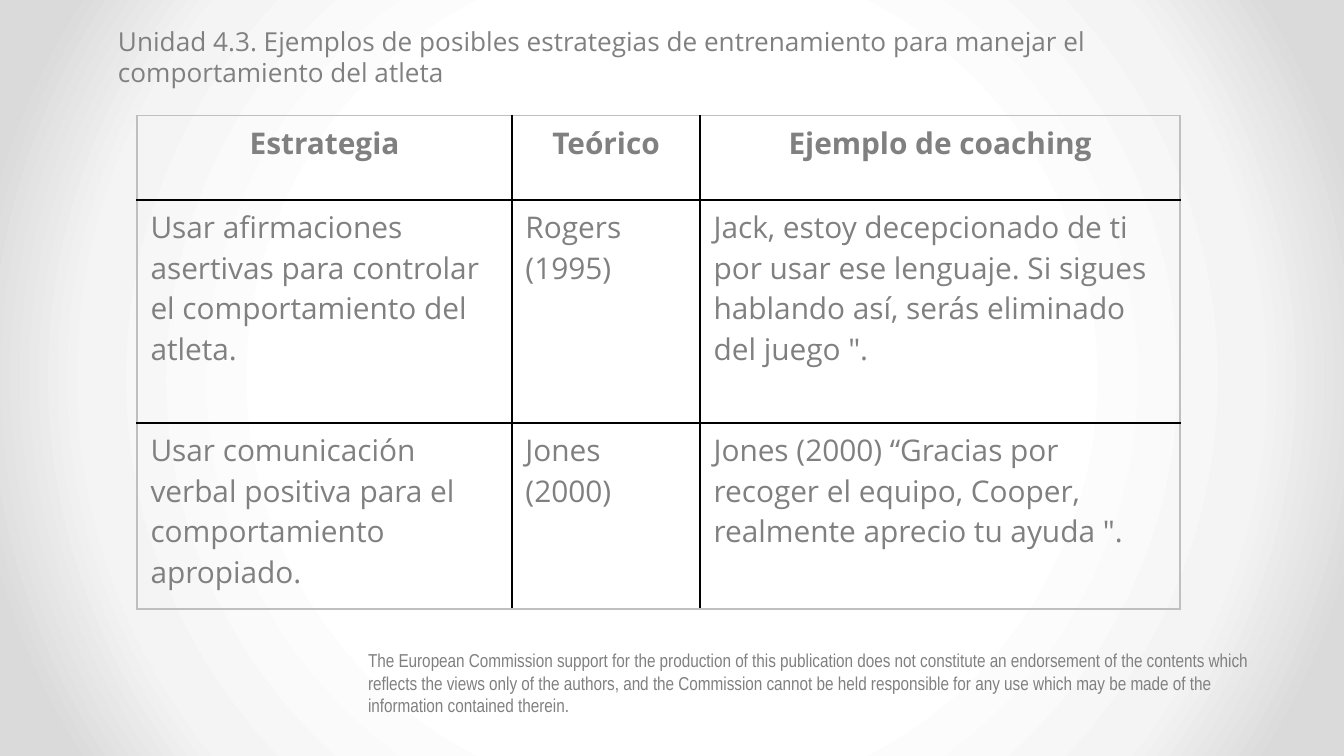
from lxml import etree
from pptx import Presentation
from pptx.dml.color import RGBColor
from pptx.enum import text
from pptx.oxml import ns
from pptx.util import Inches, Pt

GREY = RGBColor(0x80, 0x80, 0x80)
BLACK = RGBColor(0, 0, 0)
FRAME = RGBColor(0xBF, 0xBF, 0xBF)
GRADIENT = [
    (50, RGBColor(0xFF, 0xFF, 0xFF)),
    (76, RGBColor(0xF4, 0xF4, 0xF4)),
    (92, RGBColor(0xDA, 0xDA, 0xDA)),
]


def add_element(parent, tag, **attributes):
    return etree.SubElement(parent, ns.qn(tag), attributes)


def add_text(left, top, width, height, words, font_name, size):
    shape = slide.shapes.add_textbox(Inches(left), Inches(top), Inches(width), Inches(height))
    shape.text_frame.word_wrap = True
    paragraph = shape.text_frame.paragraphs[0]
    paragraph.text = words
    paragraph.font.name = font_name
    paragraph.font.size = Pt(size)
    paragraph.font.color.rgb = GREY


presentation = Presentation()
presentation.slide_width = Inches(10)
presentation.slide_height = Inches(10) * 9 // 16
slide = presentation.slides.add_slide(presentation.slide_layouts[6])

background = slide.background.fill
background.gradient()
gradient = slide.background._cSld.find(".//" + ns.qn("a:gradFill"))
for child in list(gradient):
    gradient.remove(child)
stops = add_element(gradient, "a:gsLst")
for position, color in GRADIENT:
    stop = add_element(stops, "a:gs", pos=str(position * 1000))
    add_element(stop, "a:srgbClr", val=str(color))
circle = add_element(gradient, "a:path", path="circle")
add_element(circle, "a:fillToRect", l="50000", t="50000", r="50000", b="50000")

add_text(
    2.64, 4.78, 6.93, 0.67,
    "The European Commission support for the production of this publication does not "
    "constitute an endorsement of the contents which reflects the views only of the authors, "
    "and the Commission cannot be held responsible for any use which may be made of the "
    "information contained therein.",
    "Arial Narrow", 10,
)

rows = [
    ["Estrategia", "Teórico", "Ejemplo de coaching"],
    [
        "Usar afirmaciones asertivas para controlar el comportamiento del atleta.",
        "Rogers (1995)",
        "Jack, estoy decepcionado de ti por usar ese lenguaje. Si sigues hablando así, "
        "serás eliminado del juego \".",
    ],
    [
        "Usar comunicación verbal positiva para el comportamiento apropiado.",
        "Jones (2000)",
        "Jones (2000) “Gracias por recoger el equipo, Cooper, realmente aprecio tu ayuda \".",
    ],
]
table = slide.shapes.add_table(
    3, 3, Inches(1.02), Inches(0.86), Inches(7.76), Inches(3.67)
).table
table.first_row = False
table.horz_banding = False
for column, width in zip(table.columns, [2.79, 1.4, 3.57]):
    column.width = Inches(width)
for row, height in zip(table.rows, [0.63, 1.66, 1.38]):
    row.height = Inches(height)

for row_index, row in enumerate(rows):
    for column_index, words in enumerate(row):
        cell = table.cell(row_index, column_index)
        paragraph = cell.text_frame.paragraphs[0]
        paragraph.text = words
        paragraph.font.name = "Open Sans"
        paragraph.font.size = Pt(16)
        paragraph.font.color.rgb = GREY
        paragraph.font.bold = row_index == 0
        if row_index == 0:
            paragraph.alignment = text.PP_ALIGN.CENTER

        properties = cell._tc.get_or_add_tcPr()
        outer_sides = {
            "a:lnL": column_index == 0,
            "a:lnR": column_index == 2,
            "a:lnT": row_index == 0,
            "a:lnB": row_index == 2,
        }
        for side, is_outer in outer_sides.items():
            border = add_element(properties, side, w=str(Pt(1)))
            fill = add_element(border, "a:solidFill")
            add_element(fill, "a:srgbClr", val=str(FRAME if is_outer else BLACK))
        cell.fill.background()

add_text(
    0.78, 0.14, 8.24, 0.57,
    "Unidad 4.3. Ejemplos de posibles estrategias de entrenamiento para manejar el "
    "comportamiento del atleta",
    "Open Sans", 14,
)

presentation.save("out.pptx")
